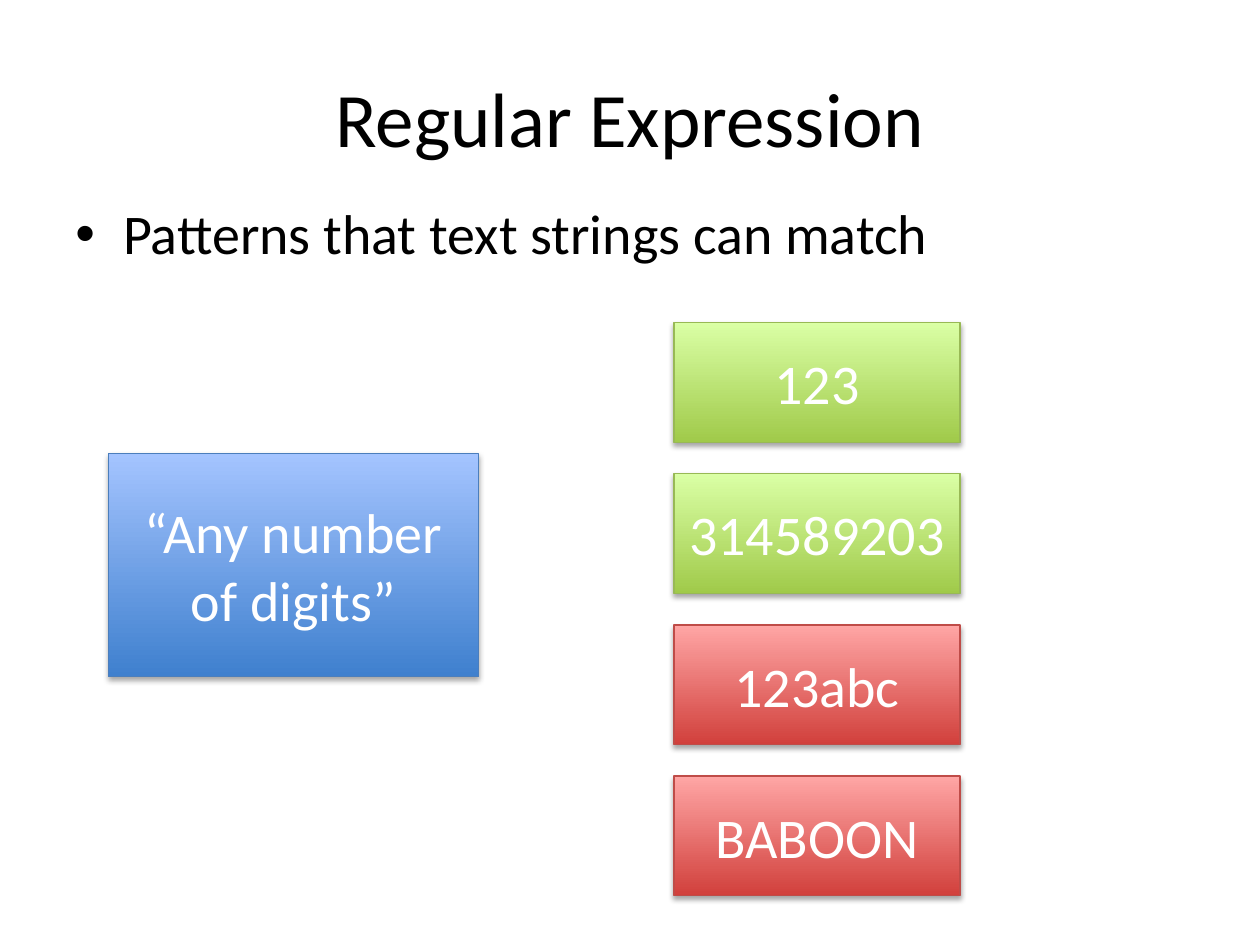
from lxml import etree
from pptx import Presentation
from pptx.dml.color import RGBColor
from pptx.enum.shapes import MSO_SHAPE
from pptx.enum.text import MSO_ANCHOR, PP_ALIGN
from pptx.oxml import parse_xml
from pptx.oxml.ns import nsdecls, qn
from pptx.util import Inches, Pt

RECT = MSO_SHAPE.RECTANGLE
MIDDLE, TOP = MSO_ANCHOR.MIDDLE, MSO_ANCHOR.TOP
CENTER, LEFT = PP_ALIGN.CENTER, PP_ALIGN.LEFT

THEME = {
    "font": "Calibri",
    "title": 44,
    "body": 32,
    "black": "000000",
    "white": "FFFFFF",
    # bottom colour, top colour, outline
    "blue": ("3F80CE", "A4C4FF", "4B7EBC"),
    "green": ("A0CA4A", "DAFFA5", "98B955"),
    "red": ("D1403C", "FFA6A5", "BF4C48"),
}
SHADOW = (
    f'<a:outerShdw {nsdecls("a")} blurRad="{Pt(3.1)}" dist="{Pt(1.8)}" dir="5400000" '
    'rotWithShape="0"><a:srgbClr val="000000"><a:alpha val="35000"/></a:srgbClr></a:outerShdw>'
)


def write(s, text, size, color, align=CENTER, anchor=MIDDLE):
    tf = s.text_frame
    tf.word_wrap = True
    tf.vertical_anchor = anchor
    p = tf.paragraphs[0]
    p.alignment = align
    r = p.add_run()
    r.text = text
    r.font.name = THEME["font"]
    r.font.size = Pt(size)
    r.font.color.rgb = RGBColor.from_string(color)
    return p


def add_box(left, top, width, height, text, palette):
    """Add a gradient rectangle with a soft shadow and white text."""
    s = slide.shapes.add_shape(RECT, Inches(left), Inches(top), Inches(width), Inches(height))
    bottom, upper, outline = THEME[palette]
    s.fill.gradient()
    s.fill.gradient_angle = 90
    for stop, color in zip(s.fill.gradient_stops, (bottom, upper)):
        stop.color.rgb = RGBColor.from_string(color)
    s.line.color.rgb = RGBColor.from_string(outline)
    s.line.width = Pt(0.75)
    s.shadow.inherit = False
    s._element.spPr.find(qn("a:effectLst")).append(parse_xml(SHADOW))
    write(s, text, THEME["body"], THEME["white"])


prs = Presentation()
prs.slide_width, prs.slide_height = Inches(10), Inches(7.5)
slide = prs.slides.add_slide(prs.slide_layouts[6])

title = slide.shapes.add_textbox(Inches(0.5), Inches(0.3), Inches(9), Inches(1.25))
write(title, "Regular Expression", THEME["title"], THEME["black"])

body = slide.shapes.add_textbox(Inches(0.5), Inches(1.53), Inches(9), Inches(0.92))
p = write(body, "Patterns that text strings can match", THEME["body"], THEME["black"], LEFT, TOP)
p.space_before = Pt(6.4)
pPr = p._p.get_or_add_pPr()
pPr.set("marL", str(Inches(0.38)))
pPr.set("indent", str(-Inches(0.38)))
etree.SubElement(pPr, qn("a:buFont")).set("typeface", "Arial")
etree.SubElement(pPr, qn("a:buChar")).set("char", "•")

add_box(0.86, 3.6, 2.94, 1.77, "“Any number of digits”", "blue")

# Green strings match the pattern, red ones do not
examples = [("123", "green"), ("314589203", "green"), ("123abc", "red"), ("BABOON", "red")]
for i, (text, palette) in enumerate(examples):
    add_box(5.35, 2.56 + 1.2 * i, 2.27, 0.95, text, palette)

prs.save("out.pptx")
